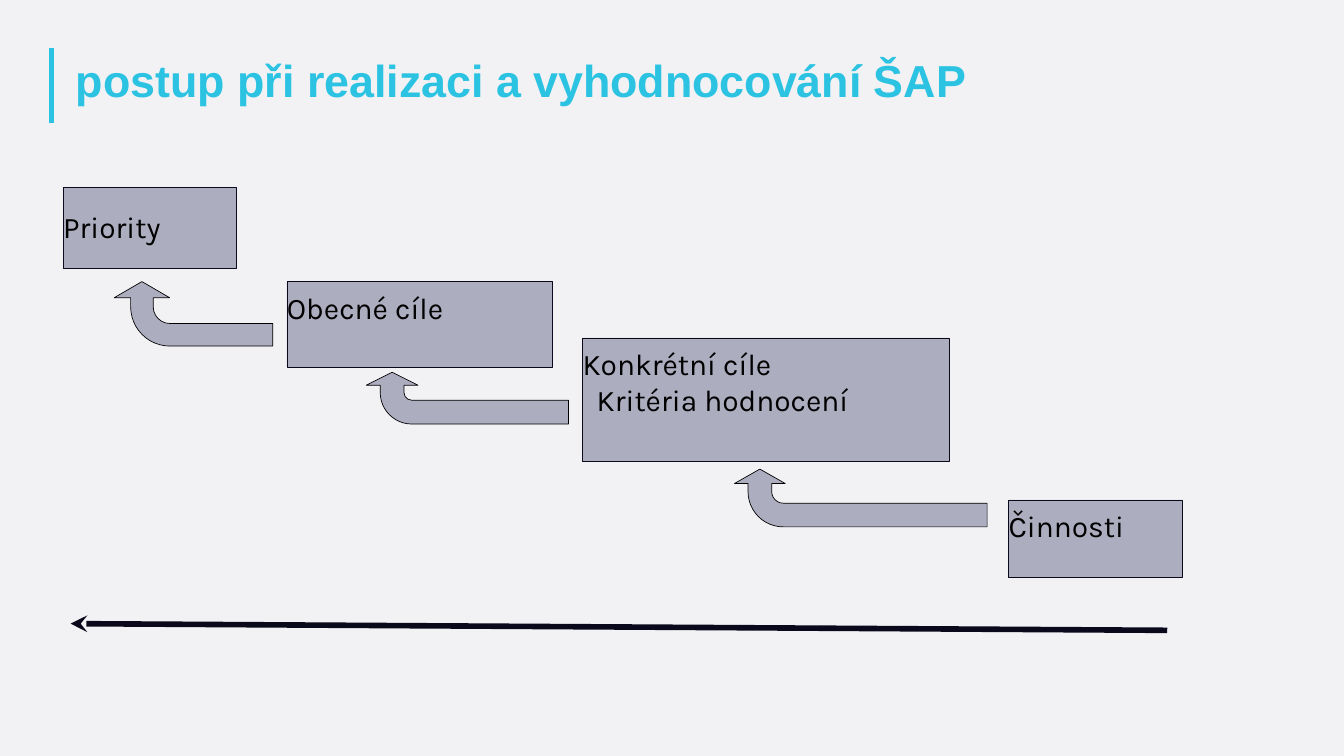
from typing import NamedTuple

from lxml import etree
from pptx import Presentation
from pptx.dml.color import RGBColor
from pptx.enum import shapes, text
from pptx.oxml.ns import qn
from pptx.util import Inches, Pt

COLORS = {
    "background": "F2F2F5",
    "accent": "2BC3E1",
    "fill": "ADADC0",
    "ink": "0A091B",
    "black": "000000",
}


class Step(NamedTuple):
    left: float
    top: float
    width: float
    height: float
    heading: str
    detail: str = ""
    top_inset: float = 0.12


class BentArrow(NamedTuple):
    left: float
    top: float
    width: float
    height: float
    adjustments: tuple[float, ...]


STEPS = [
    Step(4.27, 4.19, 3.95, 1.27, "Obecné cíle"),
    Step(8.67, 5.03, 5.46, 1.84, "Konkrétní cíle", "Kritéria hodnocení"),
    Step(0.94, 2.79, 2.58, 1.21, "Priority", top_inset=0.31),
    Step(15.01, 7.44, 2.58, 1.15, "Činnosti"),
]
BENT_ARROWS = [
    BentArrow(12.38, 5.53, 0.86, 3.76, (0.41, 0.44, 0.25, 0.61)),
    BentArrow(6.57, 4.42, 0.77, 3.01, (0.46, 0.5, 0.25, 0.61)),
    BentArrow(2.4, 3.49, 0.96, 2.36, (0.35, 0.43, 0.25, 0.61)),
]


def rgb(name: str) -> RGBColor:
    return RGBColor.from_string(COLORS[name])


def set_font(font, name: str, size: float, color: str, bold: bool = False) -> None:
    for key, value in {"name": name, "size": Pt(size), "bold": bold}.items():
        setattr(font, key, value)
    font.color.rgb = rgb(color)


def set_frame(frame, **formats) -> None:
    for key, value in formats.items():
        setattr(frame, key, value)


def add_filled(slide, kind, item: Step | BentArrow, outline: str):
    shape = slide.shapes.add_shape(kind, *map(Inches, item[:4]))
    shape.shadow.inherit = False
    shape.fill.solid()
    shape.fill.fore_color.rgb = rgb("fill")
    shape.line.color.rgb = rgb(outline)
    shape.line.width = Pt(0.75)
    return shape


def add_step(slide, step: Step) -> None:
    box = add_filled(slide, shapes.MSO_SHAPE.RECTANGLE, step, "ink")
    frame = box.text_frame
    set_frame(
        frame,
        margin_left=0,
        margin_right=0,
        margin_top=Inches(step.top_inset),
        margin_bottom=Inches(0.05),
        vertical_anchor=text.MSO_ANCHOR.TOP,
        word_wrap=True,
    )
    frame.text = "\n".join(filter(None, (step.heading, step.detail)))
    for paragraph in frame.paragraphs:
        paragraph.alignment = text.PP_ALIGN.LEFT
        set_font(paragraph.runs[0].font, "Karla", 32, "black")
    if step.detail:
        properties = frame.paragraphs[1]._p.get_or_add_pPr()
        properties.set("marL", str(Inches(0.21)))


def add_bent_arrow(slide, arrow: BentArrow) -> None:
    """Draw an arrow that starts at the right and bends upwards."""
    shape = add_filled(slide, shapes.MSO_SHAPE.BENT_ARROW, arrow, "black")
    shape.rotation = 270
    for index, value in enumerate(arrow.adjustments):
        shape.adjustments[index] = value


def add_line(slide, start: tuple[float, float], end: tuple[float, float],
             color: str, width: float, head: str = "") -> None:
    line = slide.shapes.add_connector(
        shapes.MSO_CONNECTOR.STRAIGHT, *map(Inches, start + end))
    line.line.color.rgb = rgb(color)
    line.line.width = Pt(width)
    if head:
        etree.SubElement(line.line._get_or_add_ln(), qn("a:tailEnd"), type=head)
    etree.SubElement(line._element.spPr, qn("a:effectLst"))


def add_title(slide, wording: str) -> None:
    title = slide.shapes.title
    bounds = {"left": 1.03, "top": 0.88, "width": 18.97, "height": 0.71}
    for key, value in bounds.items():
        setattr(title, key, Inches(value))
    set_frame(
        title.text_frame,
        text=wording,
        margin_left=Inches(0.1),
        margin_right=Inches(0.1),
        margin_top=Inches(0.05),
        margin_bottom=Inches(0.05),
        vertical_anchor=text.MSO_ANCHOR.MIDDLE,
        auto_size=text.MSO_AUTO_SIZE.NONE,
        word_wrap=True,
    )
    paragraph = title.text_frame.paragraphs[0]
    paragraph.alignment = text.PP_ALIGN.LEFT
    paragraph.line_spacing = 0.9
    set_font(paragraph.runs[0].font, "Arial", 48, "accent", bold=True)


def main() -> None:
    deck = Presentation()
    deck.slide_width, deck.slide_height = Inches(20), Inches(11.25)
    slide = deck.slides.add_slide(deck.slide_layouts.get_by_name("Title Only"))
    slide.background.fill.solid()
    slide.background.fill.fore_color.rgb = rgb("background")

    add_line(slide, (0.77, 0.71), (0.77, 1.83), "accent", 5)
    add_title(slide, "postup při realizaci a vyhodnocování ŠAP")
    for step in STEPS:
        add_step(slide, step)
    for arrow in BENT_ARROWS:
        add_bent_arrow(slide, arrow)
    add_line(slide, (17.37, 9.38), (1.05, 9.28), "ink", 6, head="stealth")
    deck.save("out.pptx")


if __name__ == "__main__":
    main()
